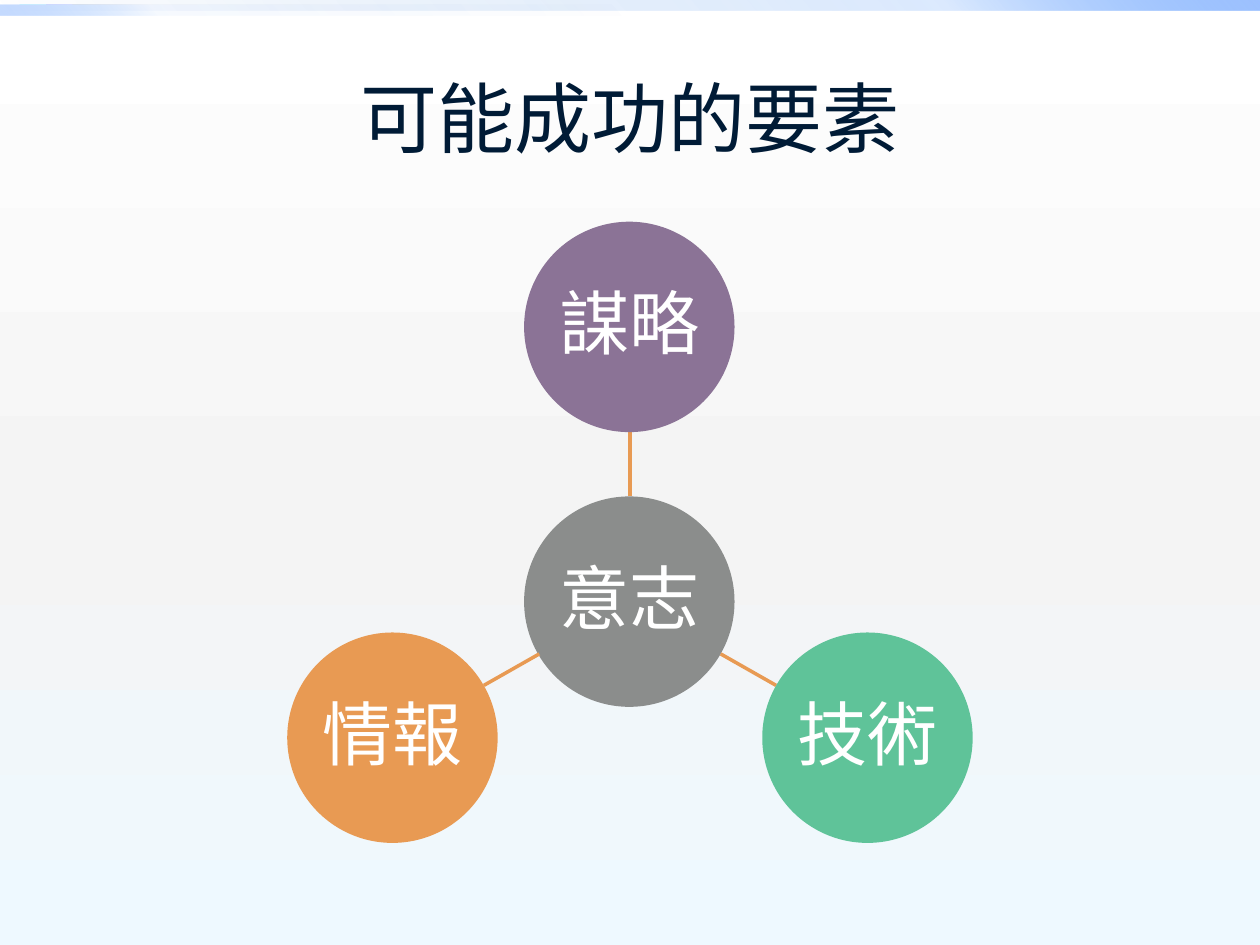
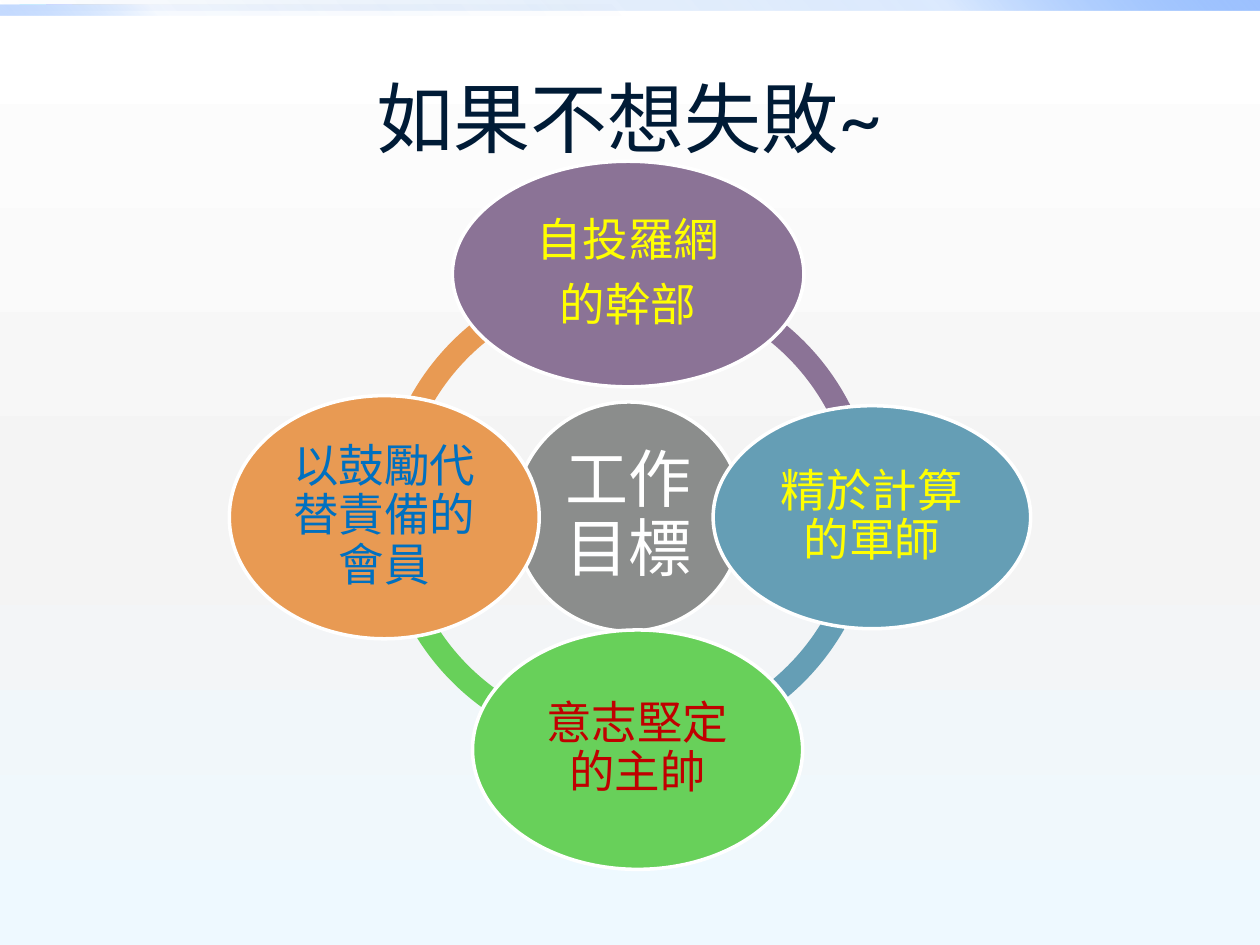
from math import cos, radians, sin

from lxml import etree
from pptx import Presentation
from pptx.dml.color import RGBColor
from pptx.enum.shapes import MSO_CONNECTOR, MSO_SHAPE
from pptx.enum.text import MSO_ANCHOR, PP_ALIGN
from pptx.oxml.ns import qn
from pptx.util import Pt

PX = 9144  # 100 px to the inch
RECT, OVAL, ARC = MSO_SHAPE.RECTANGLE, MSO_SHAPE.OVAL, MSO_SHAPE.BLOCK_ARC
STRAIGHT = MSO_CONNECTOR.STRAIGHT
CENTER, MIDDLE = PP_ALIGN.CENTER, MSO_ANCHOR.MIDDLE

WHITE, NAVY, YELLOW, RED, BLUE = "FFFFFF", "001B36", "FFFF00", "C00000", "0070C0"
GRAY, PURPLE, ORANGE = "8B8D8C", "8B7396", "E89A53"
MINT, GREEN, TEAL = "5FC399", "68D05A", "659EB5"

# Gradient stops: position %, colour, opacity %
BACKGROUND = [(0, WHITE, 100), (55, "F4F4F4", 100), (100, "EEF9FF", 100)]
TOP_BAND = [(0, "0058B7", 0), (75, "4F95FF", 20), (100, "9EC2FF", 100)]
LEFT_BAND = [(0, "0058B7", 0), (75, "4F95FF", 5), (100, "9EC2FF", 60)]


def rgb(color):
    return RGBColor.from_string(color)


def px(*lengths):
    return [round(n) * PX for n in lengths]


def set_gradient(fill, element, stops, angle):
    """Fill with any number of stops; angle runs clockwise in degrees."""
    fill.gradient()
    stop_list = next(element.iter(qn("a:gsLst")))
    for stop in list(stop_list):
        stop_list.remove(stop)
    for position, color, opacity in stops:
        stop = etree.SubElement(stop_list, qn("a:gs"), pos=str(position * 1000))
        clr = etree.SubElement(stop, qn("a:srgbClr"), val=color)
        if opacity < 100:
            etree.SubElement(clr, qn("a:alpha"), val=str(opacity * 1000))
    next(element.iter(qn("a:lin"))).set("ang", str(angle * 60000))


class Deck:
    """Holds the shared style and the slide being drawn."""

    title_font, body_font = "Lato", "Cambria"

    def __init__(self):
        self.prs = Presentation()
        self.prs.slide_width, self.prs.slide_height = px(1000, 750)
        self.s = None

    def slide(self, title):
        self.s = self.prs.slides.add_slide(self.prs.slide_layouts[6])
        set_gradient(self.s.background.fill, self.s.element, BACKGROUND, 90)
        self.band(0, 0, 1000, 8, TOP_BAND, 315)
        self.band(0, 4, 500, 8, LEFT_BAND, 135)
        sp = self.s.shapes.add_textbox(*px(50, 30, 900, 125))
        self.text(sp, title, self.title_font, 44, NAVY)

    def text(self, sp, text, font, size, color):
        tf = sp.text_frame
        tf.text = text
        tf.word_wrap = True
        tf.vertical_anchor = MIDDLE
        for p in tf.paragraphs:
            p.alignment = CENTER
            for r in p.runs:
                r.font.name, r.font.size = font, Pt(size)
                r.font.color.rgb = rgb(color)

    def shape(self, kind, x, y, w, h):
        sp = self.s.shapes.add_shape(kind, *px(x, y, w, h))
        sp.shadow.inherit = False
        sp.line.fill.background()
        return sp

    def band(self, x, y, w, h, stops, angle):
        sp = self.shape(RECT, x, y, w, h)
        set_gradient(sp.fill, sp.element.spPr, stops, angle)

    def arc(self, x, y, size, start, end, fill):
        """Thin ring segment; start and end are in the preset's own units."""
        sp = self.shape(ARC, x, y, size, size)
        sp.fill.solid()
        sp.fill.fore_color.rgb = rgb(fill)
        for i, value in enumerate((start, end, 0.046)):
            sp.adjustments[i] = value

    def oval(self, x, y, w, h, fill, text, size, color=WHITE, inset=4, outline=None):
        sp = self.shape(OVAL, x, y, w, h)
        sp.fill.solid()
        sp.fill.fore_color.rgb = rgb(fill)
        if outline:
            sp.line.color.rgb = rgb(outline)
            sp.line.width = Pt(2)
        self.text(sp, text, self.body_font, size, color)
        tf = sp.text_frame
        tf.margin_left = tf.margin_right = tf.margin_top = tf.margin_bottom = inset * PX
        for p in tf.paragraphs:
            p.line_spacing = 0.9
            p.space_after = Pt(round(size * 0.35))

    def line(self, x1, y1, x2, y2, color):
        cn = self.s.shapes.add_connector(STRAIGHT, *px(x1, y1, x2, y2))
        cn.line.color.rgb = rgb(color)
        cn.line.width = Pt(2)
        etree.SubElement(cn.element.spPr, qn("a:effectLst"))


def success_slide(deck):
    deck.slide("可能成功的要素")
    cx, cy, diameter, reach = 500, 477, 167, 218
    radius = diameter / 2

    def point(angle, distance):
        a = radians(angle)
        return cx + distance * cos(a), cy + distance * sin(a)

    def circle(x, y, fill, text):
        deck.oval(x - radius, y - radius, diameter, diameter, fill, text, 40, inset=3)

    circle(cx, cy, GRAY, "意志")
    for angle, fill, text in [(-90, PURPLE, "謀略"), (30, MINT, "技術"), (150, ORANGE, "情報")]:
        deck.line(*point(angle, radius), *point(angle, reach - radius), ORANGE)
        circle(*point(angle, reach), fill, text)


def avoid_failure_slide(deck):
    deck.slide("如果不想失敗~")
    for y, start, end, fill in [
        (213, 108, 162, ORANGE),
        (204, 52.65, 106.51, GREEN),
        (204, 1.5, 52.72, TEAL),
        (213, 162, 0, PURPLE),
    ]:
        deck.arc(301, y, 395, start, end, fill)
    deck.oval(408, 319, 182, 182, GRAY, "工作目標", 36, inset=5, outline=WHITE)
    for x, y, w, h, fill, text, color in [
        (359, 128, 279, 179, PURPLE, "自投羅網\n的幹部", YELLOW),
        (566, 322, 252, 177, TEAL, "精於計算的軍師", YELLOW),
        (375, 500, 262, 190, GREEN, "意志堅定的主帥", RED),
        (182, 314, 246, 193, ORANGE, "以鼓勵代替責備的會員", BLUE),
    ]:
        deck.oval(x, y, w, h, fill, text, 26, color, outline=WHITE)


def main():
    deck = Deck()
    success_slide(deck)
    avoid_failure_slide(deck)
    deck.prs.save("out.pptx")


if __name__ == "__main__":
    main()
